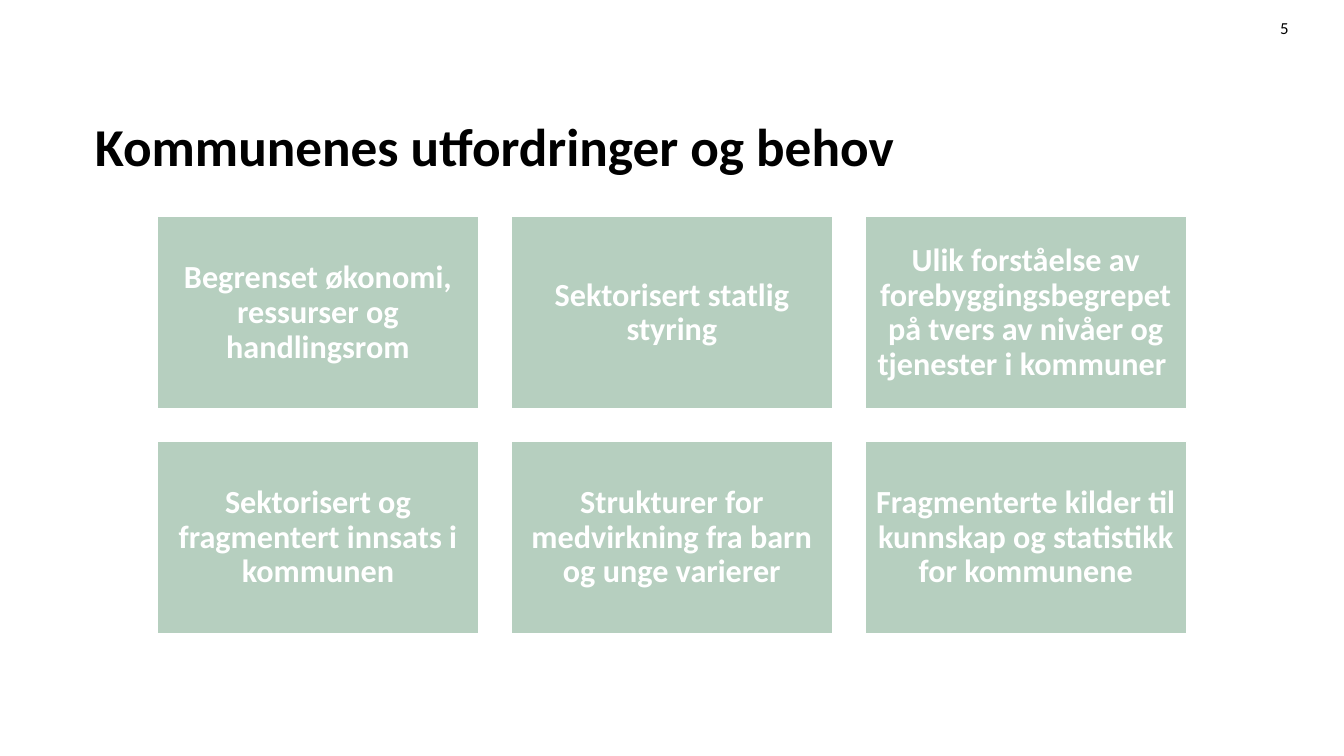
from pptx import Presentation
from pptx.dml.color import RGBColor
from pptx.enum.shapes import MSO_SHAPE as Shape
from pptx.enum.text import MSO_ANCHOR as Anchor, PP_ALIGN as Align
from pptx.util import Inches, Pt

COLORS = {"text": "000000", "card": "B6CFBF", "white": "FFFFFF"}


def write(shape, text, size, color, bold, align, anchor, inset, line_spacing):
    frame = shape.text_frame
    frame_format = {"word_wrap": True, "vertical_anchor": anchor}
    for side in ("left", "right", "top", "bottom"):
        frame_format[f"margin_{side}"] = Inches(inset)
    for name, value in frame_format.items():
        setattr(frame, name, value)
    paragraph = frame.paragraphs[0]
    paragraph.alignment = align
    paragraph.line_spacing = line_spacing
    run = paragraph.add_run()
    run.text = text
    for name, value in {"name": "Calibri", "size": Pt(size), "bold": bold}.items():
        setattr(run.font, name, value)
    run.font.color.rgb = RGBColor.from_string(COLORS[color])


deck = Presentation()
deck.slide_width, deck.slide_height = Inches(13.33), Inches(7.5)
slide = deck.slides.add_slide(deck.slide_layouts[6])

# Page number and title
page_number = slide.shapes.add_textbox(
    Inches(11.25), Inches(0.18), Inches(1.53), Inches(0.2))
write(page_number, "5", 12, "text", False, Align.RIGHT, Anchor.MIDDLE, 0, 1.0)

title = slide.shapes.add_textbox(
    Inches(0.94), Inches(0.62), Inches(11.44), Inches(1.15))
write(title, "Kommunenes utfordringer og behov", 38, "text", True,
      Align.LEFT, Anchor.BOTTOM, 0, 0.9)

# Challenges in a grid of three columns
challenges = [
    "Begrenset økonomi, ressurser og handlingsrom",
    "Sektorisert statlig styring",
    "Ulik forståelse av forebyggingsbegrepet på tvers av nivåer og tjenester i kommuner ",
    "Sektorisert og fragmentert innsats i kommunen",
    "Strukturer for medvirkning fra barn og unge varierer",
    "Fragmenterte kilder til kunnskap og statistikk for kommunene",
]
columns = 3
grid_left, grid_top = 1.56, 2.15
card_width, card_height, gap = 3.19, 1.91, 0.32

for index, challenge in enumerate(challenges):
    row, column = divmod(index, columns)
    card = slide.shapes.add_shape(
        Shape.RECTANGLE,
        Inches(grid_left + column * (card_width + gap)),
        Inches(grid_top + row * (card_height + gap)),
        Inches(card_width), Inches(card_height))
    card.shadow.inherit = False
    card.fill.solid()
    card.fill.fore_color.rgb = RGBColor.from_string(COLORS["card"])
    card.line.color.rgb = RGBColor.from_string(COLORS["white"])
    card.line.width = Pt(1)
    write(card, challenge, 23, "white", True, Align.CENTER, Anchor.MIDDLE, 0.1, 0.9)

deck.save("out.pptx")
